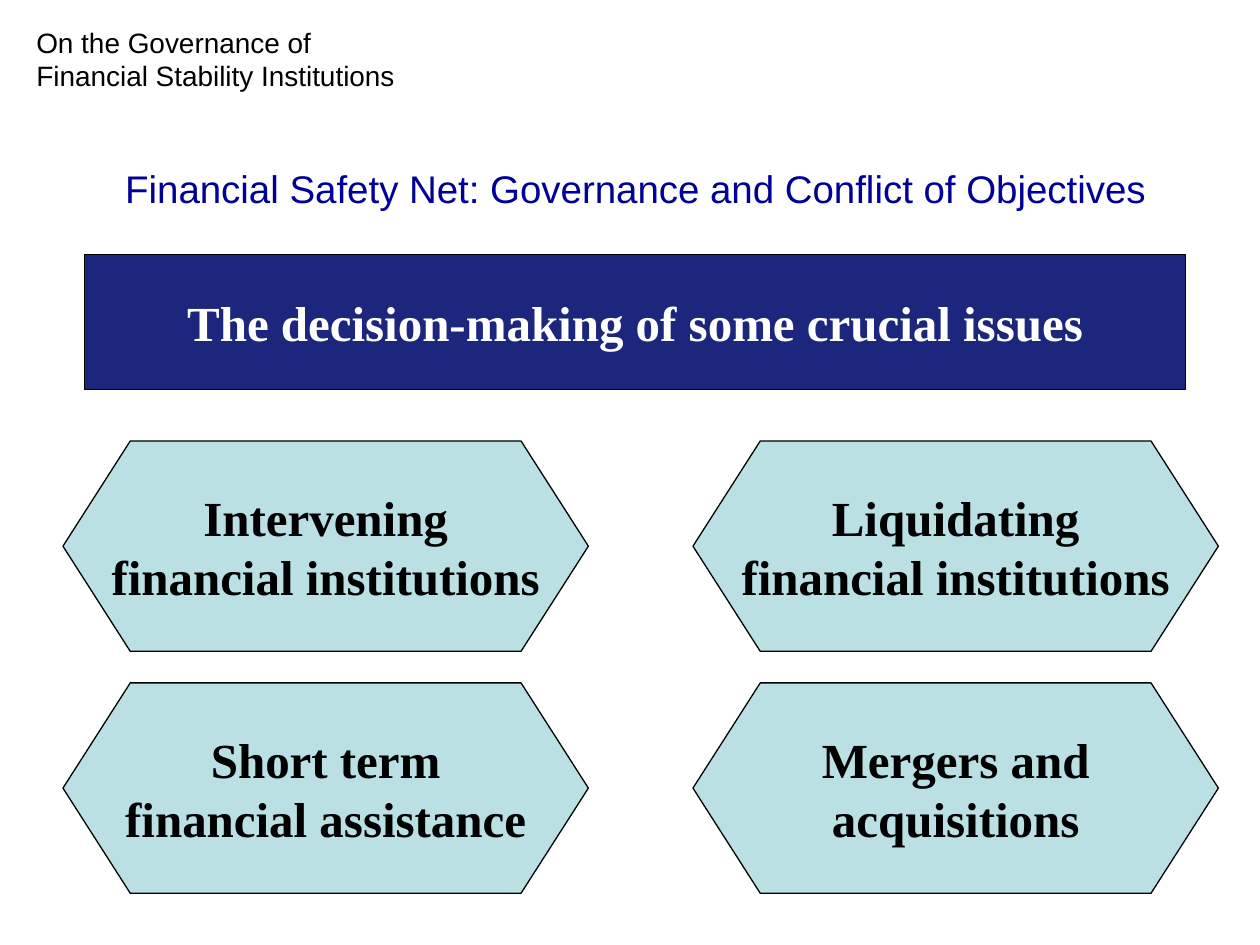
from pptx import Presentation
from pptx.dml.color import RGBColor
from pptx.enum.shapes import MSO_SHAPE
from pptx.enum.text import MSO_ANCHOR, PP_ALIGN
from pptx.util import Inches, Pt

RECT, HEXAGON = MSO_SHAPE.RECTANGLE, MSO_SHAPE.HEXAGON
TOP, MIDDLE, BOTTOM = MSO_ANCHOR.TOP, MSO_ANCHOR.MIDDLE, MSO_ANCHOR.BOTTOM
LEFT, CENTER = PP_ALIGN.LEFT, PP_ALIGN.CENTER

COLORS = {"navy": "1C267D", "aqua": "BBE0E3", "blue": "000099",
          "black": "000000", "white": "FFFFFF"}
HEADER_FONT = {"name": "Arial", "size": Pt(16), "bold": False}
TITLE_FONT = {"name": "Arial", "size": Pt(22), "bold": False}
BLOCK_FONT = {"name": "Times New Roman", "size": Pt(28), "bold": True}

ISSUES = [
    [["Intervening", "financial institutions"], ["Liquidating", "financial institutions"]],
    [["Short term", "financial assistance"], ["Mergers and", "acquisitions"]],
]


def rgb(name):
    return RGBColor.from_string(COLORS[name])


def write(s, lines, font, color, align, anchor, wrap):
    tf = s.text_frame
    tf.word_wrap = wrap
    tf.vertical_anchor = anchor
    for i, line in enumerate(lines):
        p = tf.add_paragraph() if i else tf.paragraphs[0]
        p.alignment = align
        r = p.add_run()
        r.text = line
        for key, value in font.items():
            setattr(r.font, key, value)
        r.font.color.rgb = rgb(color)


def add_label(slide, box, text, font, color, align, anchor):
    s = slide.shapes.add_textbox(*map(Inches, box))
    write(s, [text], font, color, align, anchor, True)
    return s


def add_block(slide, box, kind, lines, fill, color):
    s = slide.shapes.add_shape(kind, *map(Inches, box))
    s.shadow.inherit = False
    s.fill.solid()
    s.fill.fore_color.rgb = rgb(fill)
    s.line.color.rgb = rgb("black")
    s.line.width = Pt(0.75)
    write(s, lines, BLOCK_FONT, color, CENTER, MIDDLE, False)
    return s


def add_heading(slide, box):
    s = add_label(slide, box, "Financial Safety Net: Governance and Conflict of Objectives",
                  TITLE_FONT, "blue", CENTER, BOTTOM)
    s.text_frame.margin_bottom = Inches(0.1)


def add_issue_grid(slide, box, gap_x, gap_y):
    left, top, width, height = box
    cell_w = (width - gap_x) / 2
    cell_h = (height - gap_y) / 2
    for row, issues in enumerate(ISSUES):
        for col, lines in enumerate(issues):
            cell = (left + col * (cell_w + gap_x), top + row * (cell_h + gap_y),
                    cell_w, cell_h)
            s = add_block(slide, cell, HEXAGON, lines, "aqua", "black")
            s.adjustments[0] = 0.32


def main():
    prs = Presentation()
    prs.slide_width, prs.slide_height = Inches(10), Inches(7.5)
    slide = prs.slides.add_slide(prs.slide_layouts[6])
    add_label(slide, (0.19, 0.15, 3.27, 0.64),
              "On the Governance of Financial Stability Institutions",
              HEADER_FONT, "black", LEFT, TOP)
    add_heading(slide, (0.42, 1.21, 9.25, 0.57))
    add_block(slide, (0.67, 2.02, 8.74, 1.07), RECT,
              ["The decision-making of some crucial issues"], "navy", "white")
    add_issue_grid(slide, (0.5, 3.5, 9.17, 3.59), 0.83, 0.25)
    prs.save("out.pptx")


if __name__ == "__main__":
    main()
